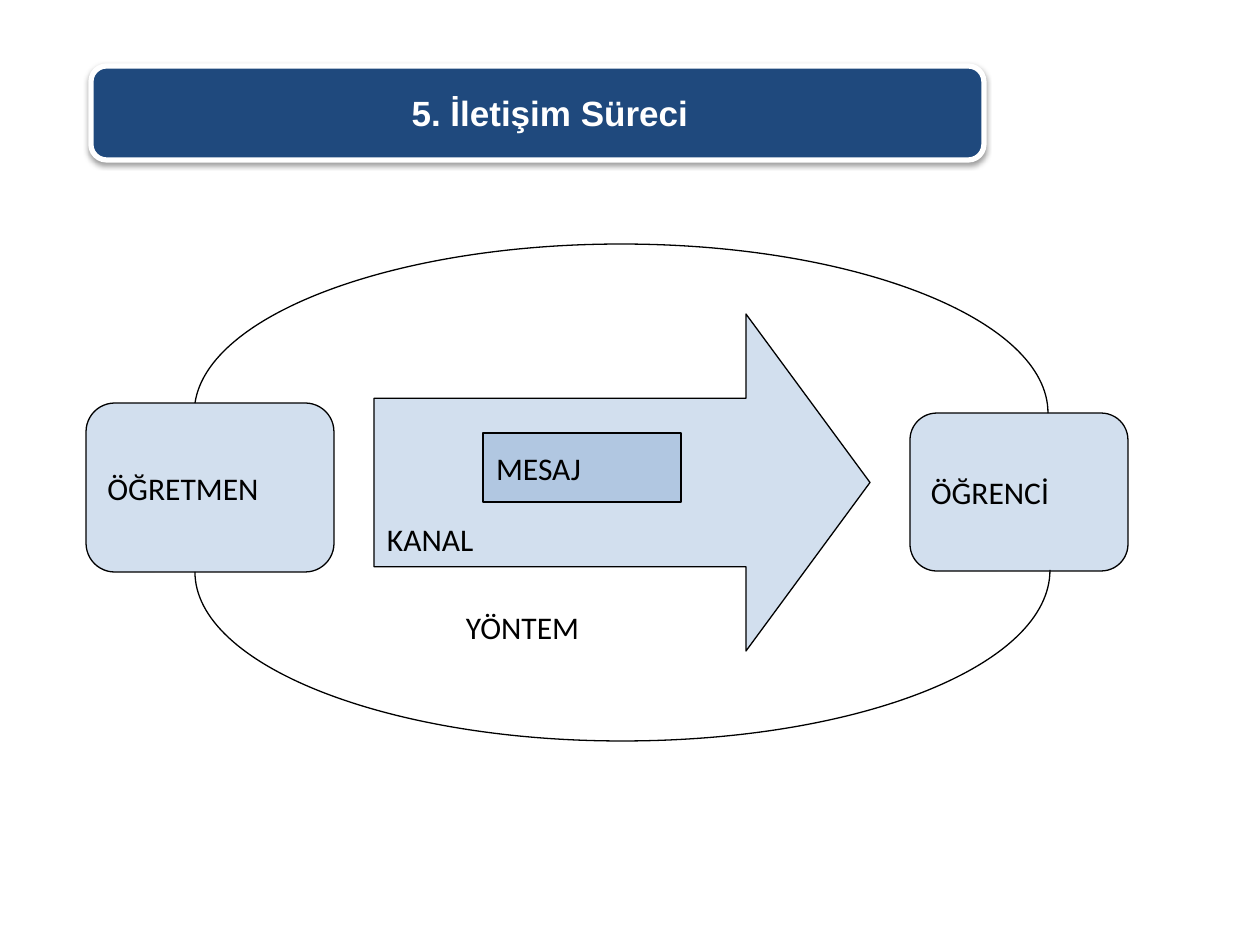
from dataclasses import dataclass

from lxml.etree import SubElement
from pptx import Presentation
from pptx.dml.color import RGBColor
from pptx.enum.shapes import MSO_SHAPE
from pptx.enum.text import MSO_ANCHOR, PP_ALIGN
from pptx.oxml.ns import qn
from pptx.util import Emu, Pt

EMU_PER_PX = 914400 / 126
INSET = 13
BLACK, WHITE, NAVY, BLUE = "000000", "FFFFFF", "1F497D", "4F81BD"


@dataclass
class Block:
    text: str
    kind: MSO_SHAPE
    left: int
    top: int
    width: int
    height: int
    adjustments: tuple = ()
    top_inset: int = 6


@dataclass
class Curve:
    start: tuple
    bends: list  # two control points and an end point for each bend


BLOCKS = [
    Block("ÖĞRETMEN", MSO_SHAPE.ROUNDED_RECTANGLE, 86, 403, 248, 169, (0.17,)),
    Block("ÖĞRENCİ", MSO_SHAPE.ROUNDED_RECTANGLE, 910, 413, 218, 158, (0.17,)),
    # The deep top inset drops the channel name below the message
    Block("KANAL", MSO_SHAPE.RIGHT_ARROW, 374, 314, 496, 337,
          (0.5, 124 / 337), 118),
    Block("MESAJ", MSO_SHAPE.RECTANGLE, 483, 433, 198, 69),
]

CURVES = [
    Curve((1050, 570), [((1050, 665), (861, 741), (622, 741)),
                        ((387, 741), (195, 665), (195, 572))]),
    Curve((195, 403), [((208, 314), (396, 244), (621, 244)),
                       ((857, 244), (1048, 320), (1048, 413))]),
]


def px(length: float) -> Emu:
    return Emu(round(length * EMU_PER_PX))


def color(value: str) -> RGBColor:
    return RGBColor.from_string(value)


def set_alpha(color_element, percent: int) -> None:
    SubElement(color_element, qn("a:alpha")).set("val", str(percent * 1000))


def set_line(shape, value: str, width: float) -> None:
    shape.line.color.rgb = color(value)
    shape.line.width = Pt(width)


def set_text(shape, text: str, size: int, font: str, value: str,
             top_inset: int = 6, left_inset: int = INSET) -> None:
    frame = shape.text_frame
    frame.text = text
    frame.word_wrap = True
    frame.margin_left, frame.margin_right = px(left_inset), px(INSET)
    frame.margin_top, frame.margin_bottom = px(top_inset), px(6)
    para = frame.paragraphs[0]
    para.alignment = PP_ALIGN.LEFT
    span = para.runs[0]
    span.font.size = Pt(size)
    span.font.name = font
    span.font.color.rgb = color(value)


def add_title(page) -> None:
    box = page.shapes.add_shape(
        MSO_SHAPE.ROUNDED_RECTANGLE, px(91), px(66), px(893), px(94))
    box.fill.solid()
    box.fill.fore_color.rgb = color(NAVY)
    set_line(box, WHITE, 3)
    set_text(box, "5. İletişim Süreci", 20, "Arial", WHITE, left_inset=38)
    box.text_frame.vertical_anchor = MSO_ANCHOR.MIDDLE
    para = box.text_frame.paragraphs[0]
    para.alignment = PP_ALIGN.CENTER
    para.runs[0].font.bold = True

    # Soft shadow straight below the bar
    box.shadow.inherit = False
    effects = box._element.spPr.find(qn("a:effectLst"))
    shadow = SubElement(effects, qn("a:outerShdw"), blurRad=str(Pt(3.1)),
                        dist=str(Pt(1.6)), dir="5400000", rotWithShape="0")
    set_alpha(SubElement(shadow, qn("a:srgbClr"), val=BLACK), 38)


def add_block(page, block: Block) -> None:
    shape = page.shapes.add_shape(
        block.kind, px(block.left), px(block.top),
        px(block.width), px(block.height))
    for index, value in enumerate(block.adjustments):
        shape.adjustments[index] = value
    shape.shadow.inherit = False
    shape.fill.solid()
    shape.fill.fore_color.rgb = color(BLUE)
    set_alpha(shape._element.spPr.find(qn("a:solidFill"))[0], 25)
    set_line(shape, BLACK, 0.75)
    set_text(shape, block.text, 18, "Calibri", BLACK, block.top_inset)
    shape.text_frame.vertical_anchor = MSO_ANCHOR.MIDDLE


def add_curve(page, curve: Curve) -> None:
    points = [point for bend in curve.bends for point in bend]
    builder = page.shapes.build_freeform(*curve.start, scale=EMU_PER_PX)
    builder.add_line_segments(points, close=False)
    shape = builder.convert_to_shape()

    # Join every three straight segments into one Bézier bend
    outline = next(shape._element.iter(qn("a:path")))
    segments = outline.findall(qn("a:lnTo"))
    for first in range(0, len(segments), 3):
        bend = SubElement(outline, qn("a:cubicBezTo"))
        for segment in segments[first:first + 3]:
            bend.append(segment[0])
            outline.remove(segment)

    shape.shadow.inherit = False
    shape.fill.background()
    set_line(shape, BLACK, 0.75)


def main() -> None:
    deck = Presentation()
    deck.slide_width, deck.slide_height = px(1260), px(945)
    page = deck.slides.add_slide(deck.slide_layouts[6])

    add_title(page)

    # Teacher, student, channel and message
    for block in BLOCKS:
        add_block(page, block)

    # Method label
    label = page.shapes.add_textbox(px(453), px(601), px(278), px(50))
    set_text(label, "YÖNTEM", 18, "Calibri", BLACK, top_inset=7)

    # Curves that join teacher and student
    for curve in CURVES:
        add_curve(page, curve)

    deck.save("out.pptx")


if __name__ == "__main__":
    main()
